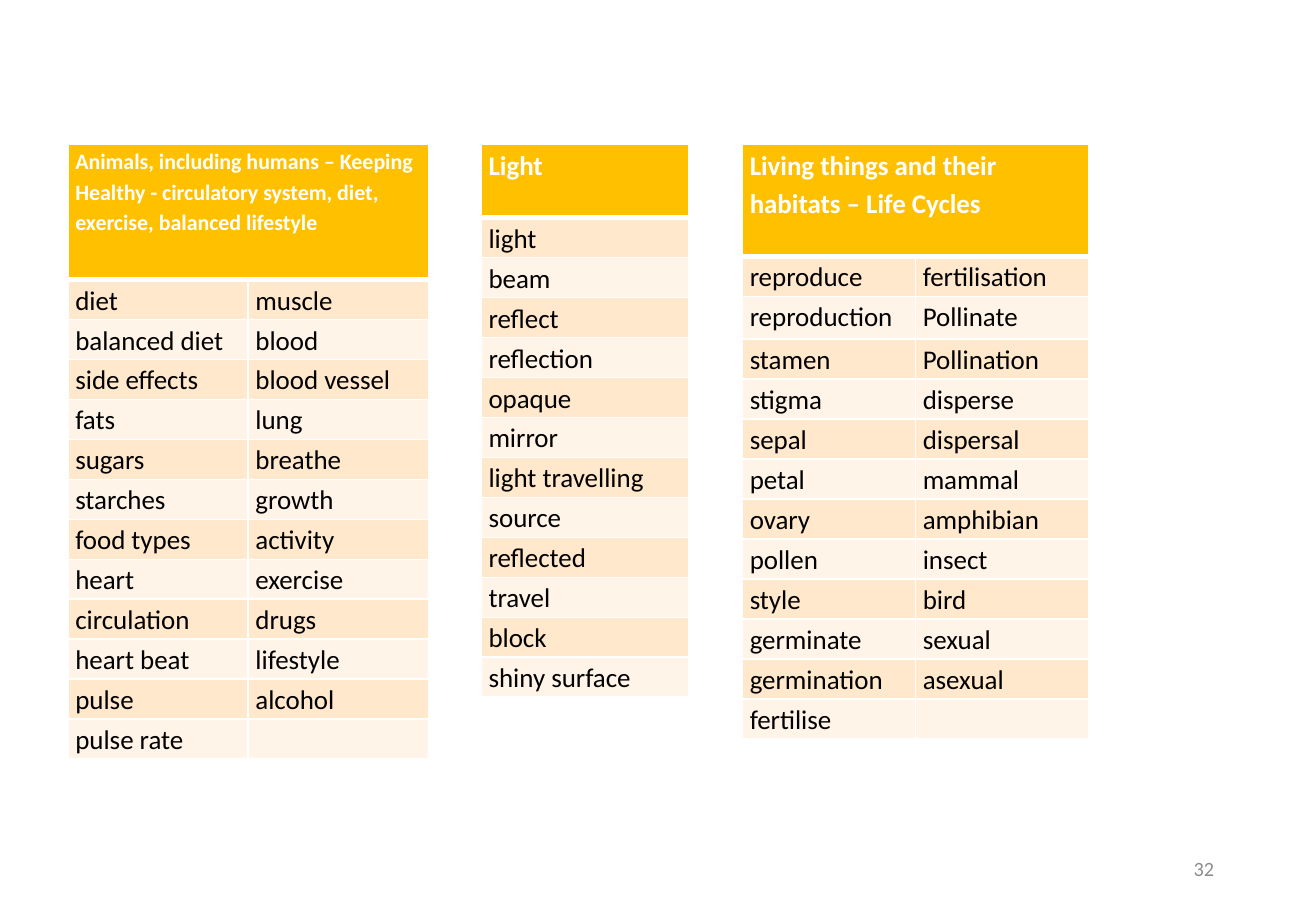
"""Build the slide of three science vocabulary tables."""
from dataclasses import dataclass

from lxml.etree import SubElement
from pptx import Presentation
from pptx.dml.color import RGBColor as Rgb
from pptx.enum.text import MSO_ANCHOR as Anchor, PP_ALIGN as Align
from pptx.oxml.ns import qn
from pptx.slide import Slide
from pptx.table import _Cell as Cell
from pptx.text.text import TextFrame
from pptx.util import Inches, Pt

COLOURS = {
    "heading": "FFC000", "odd": "FFE8CC", "even": "FFF4E7",
    "border": "FFFFFF", "heading_text": "FFFFFF",
    "word": "000000", "number": "8C8C8C",
}
SLIDE_W, SLIDE_H = Inches(10.83), Inches(7.5)
TABLE_TOP, ROW_HEIGHT = 15.87, 4.39
CELL_INSET = Inches(0.06)
THIN, THICK = 1, 3


@dataclass(frozen=True)
class Topic:
    """A vocabulary table, with lengths in percent of the slide."""
    title: str
    title_size: int
    left: float
    column_width: float
    title_height: float
    columns: tuple[tuple[str, ...], ...]
    tall_row: int = 0


TOPICS = (
    Topic(
        "Animals, including humans – Keeping Healthy - circulatory system, "
        "diet, exercise, balanced lifestyle", 13, 5.17, 13.69, 14.8,
        (("diet", "balanced diet", "side effects", "fats", "sugars", "starches",
          "food types", "heart", "circulation", "heart beat", "pulse", "pulse rate"),
         ("muscle", "blood", "blood vessel", "lung", "breathe", "growth",
          "activity", "exercise", "drugs", "lifestyle", "alcohol", "")),
    ),
    Topic(
        "Living things and their habitats – Life Cycles", 16, 56.42, 13.15, 12.27,
        (("reproduce", "reproduction", "stamen", "stigma", "sepal", "petal",
          "ovary", "pollen", "style", "germinate", "germination", "fertilise"),
         ("fertilisation", "Pollinate", "Pollination", "disperse", "dispersal",
          "mammal", "amphibian", "insect", "bird", "sexual", "asexual", "")),
        tall_row=2,
    ),
    Topic(
        "Light", 16, 36.57, 15.79, 8,
        (("light", "beam", "reflect", "reflection", "opaque", "mirror",
          "light travelling", "source", "reflected", "travel", "block",
          "shiny surface"),),
    ),
)
TALL_ROW_HEIGHT = 4.7


def across(percent: float) -> int:
    """Turn a percentage of the slide's width into a length."""
    return round(SLIDE_W * percent / 100)


def down(percent: float) -> int:
    """Turn a percentage of the slide's height into a length."""
    return round(SLIDE_H * percent / 100)


def write(frame: TextFrame, text: str, *, size: int = 16, colour: str = "word",
          bold: bool = False, align: Align = Align.LEFT, spacing: float = 1.15) -> None:
    """Write one formatted paragraph."""
    paragraph = frame.paragraphs[0]
    paragraph.alignment = align
    paragraph.line_spacing = spacing
    run = paragraph.add_run()
    run.text = text
    run.font.name = "Calibri"
    run.font.size = Pt(size)
    run.font.bold = bold
    run.font.color.rgb = Rgb.from_string(COLOURS[colour])


def style_cell(cell: Cell, fill: str, *, top: int = THIN, bottom: int = THIN) -> None:
    """Give a cell its insets, borders and fill."""
    cell.margin_left = cell.margin_right = CELL_INSET
    cell.margin_top = cell.margin_bottom = 0
    properties = cell._tc.get_or_add_tcPr()
    for side, width in (("L", THIN), ("R", THIN), ("T", top), ("B", bottom)):
        line = SubElement(properties, qn(f"a:ln{side}"), w=str(Pt(width)))
        solid = SubElement(line, qn("a:solidFill"))
        SubElement(solid, qn("a:srgbClr"), val=COLOURS["border"])
    cell.fill.solid()
    cell.fill.fore_color.rgb = Rgb.from_string(COLOURS[fill])


def draw_topic(slide: Slide, topic: Topic) -> None:
    """Draw a topic as a heading above banded columns of words."""
    word_rows = list(zip(*topic.columns))
    heights = [topic.title_height] + [
        TALL_ROW_HEIGHT if number == topic.tall_row else ROW_HEIGHT
        for number in range(1, len(word_rows) + 1)
    ]
    count = len(topic.columns)
    table = slide.shapes.add_table(
        len(heights), count, across(topic.left), down(TABLE_TOP),
        across(topic.column_width * count), down(sum(heights))).table
    table.horz_banding = False
    for column in table.columns:
        column.width = across(topic.column_width)
    for row, height in zip(table.rows, heights):
        row.height = down(height)

    for cell in table.rows[0].cells:
        style_cell(cell, "heading", bottom=THICK)
    title = table.cell(0, 0)
    if count > 1:
        title.merge(table.cell(0, count - 1))
    write(title.text_frame, topic.title, size=topic.title_size,
          colour="heading_text", bold=True)

    for number, words in enumerate(word_rows, start=1):
        for cell, word in zip(table.rows[number].cells, words):
            style_cell(cell, "odd" if number % 2 else "even",
                       top=THICK if number == 1 else THIN)
            if word:
                write(cell.text_frame, word)


def draw_page_number(slide: Slide, number: str) -> None:
    """Draw the page number at the bottom right."""
    frame = slide.shapes.add_textbox(
        across(70.64), down(92.67), across(22.53), down(5.33)).text_frame
    frame.word_wrap = True
    frame.vertical_anchor = Anchor.MIDDLE
    write(frame, number, size=12, colour="number", align=Align.RIGHT, spacing=1.0)


def main() -> None:
    """Build and save the presentation."""
    deck = Presentation()
    deck.slide_width, deck.slide_height = SLIDE_W, SLIDE_H
    slide = deck.slides.add_slide(deck.slide_layouts[6])
    draw_page_number(slide, "32")
    for topic in TOPICS:
        draw_topic(slide, topic)
    deck.save("out.pptx")


if __name__ == "__main__":
    main()
